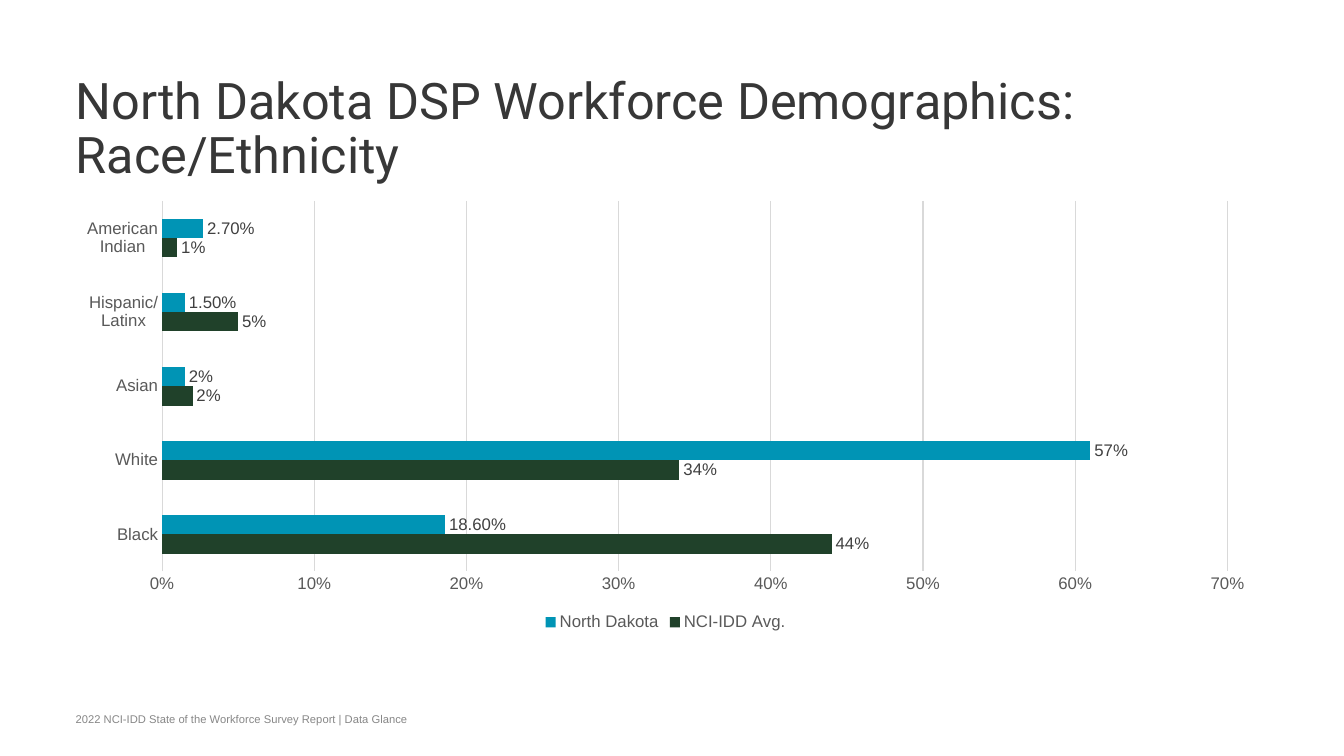
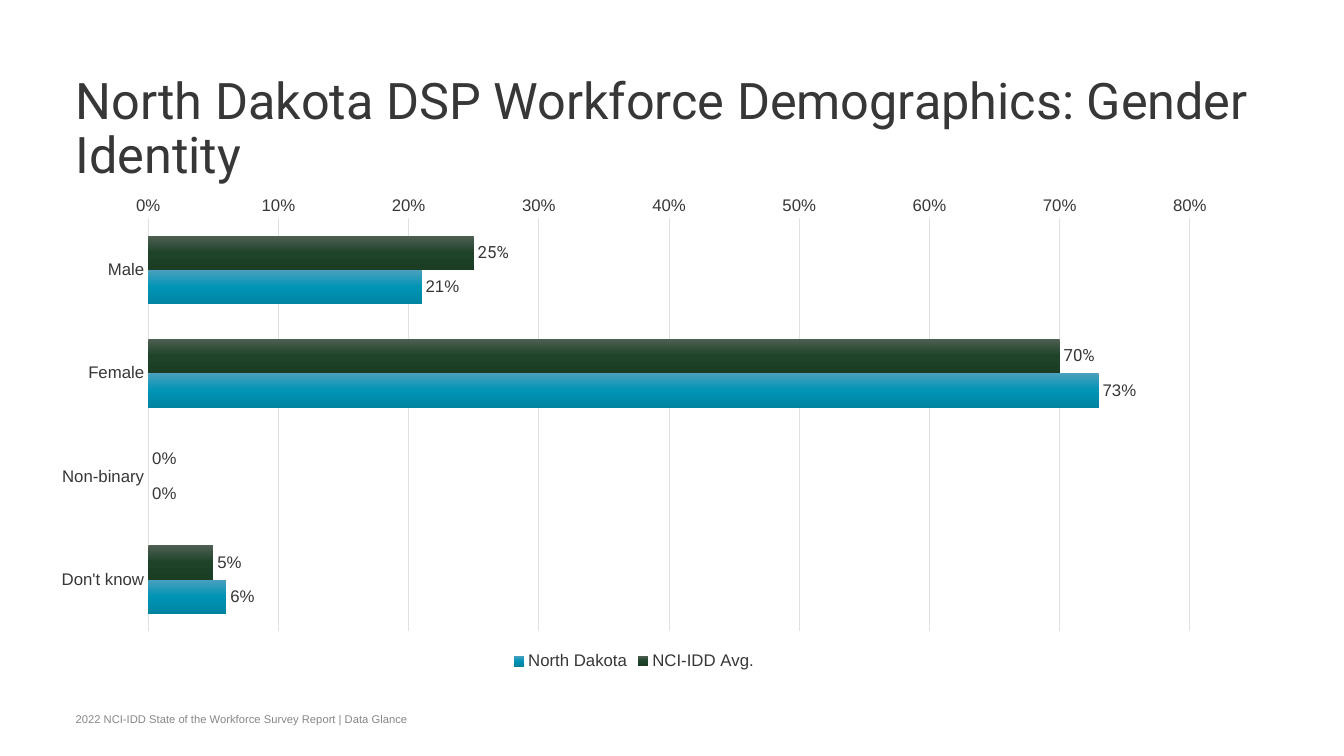
import pptx
import pptx.chart.data
import pptx.dml.color
import pptx.enum.chart
import pptx.enum.text
import pptx.oxml
import pptx.oxml.ns
import pptx.util

PX = 9525  # EMU per px, 96 px to the inch
SLIDE_SIZE = (1280, 720)
TITLE_BOX = (72, 72, 1136, 96)
FOOTER_BOX = (72, 677, 755, 14)
FOOTER = "2022 NCI-IDD State of the Workforce Survey Report | Data Glance"
BODY_FONT, TITLE_FONT = "Arial", "Roboto"
INK, FOOTER_GREY = "373737", "878787"

# A series fill is one colour, or the stops of a top-to-bottom gradient.
# "custom" maps a point to its own label text and font.
SLIDES = [
    {
        "title": "North Dakota DSP Workforce Demographics: Race/Ethnicity",
        "box": (60, 183, 1148, 422),
        "categories": ["Black", "White", "Asian", "Hispanic/Latinx", "American Indian"],
        "reverse": False,
        "maximum": 0.7,
        "gap": 182,
        "text": "595959",
        "label": "404040",
        "line": "D9D9D9",
        "series": [
            {"name": "NCI-IDD Avg.", "values": [0.44, 0.34, 0.02, 0.05, 0.01],
             "fill": ["20412A"], "format": "0%", "custom": {}},
            {"name": "North Dakota", "values": [0.186, 0.61, 0.015, 0.015, 0.027],
             "fill": ["0094B5"], "format": "0.00%",
             "custom": {1: ("57%", BODY_FONT), 2: ("2%", BODY_FONT)}},
        ],
    },
    {
        "title": "North Dakota DSP Workforce Demographics: Gender Identity",
        "box": (36, 178, 1136, 464),
        "categories": ["Male", "Female", "Non-binary", "Don't know"],
        "reverse": True,
        "maximum": 0.8,
        "gap": 100,
        "text": INK,
        "label": INK,
        "line": "E1E1E1",
        "series": [
            {"name": "NCI-IDD Avg.", "values": [0.25, 0.7, 0, 0.05],
             "fill": ["4F5F53", "1E4329", "1A3D24"], "format": "0%",
             "custom": {0: ("25%", TITLE_FONT), 1: ("70%", TITLE_FONT)}},
            {"name": "North Dakota", "values": [0.21, 0.73, 0, 0.06],
             "fill": ["4BA0BE", "0094B5", "0084A1"], "format": "0%", "custom": {}},
        ],
    },
]


def color(value):
    return pptx.dml.color.RGBColor.from_string(value)


def emu(box):
    return [pptx.util.Emu(length * PX) for length in box]


def set_font(font, name, size, ink):
    font.name = name
    font.size = pptx.util.Pt(size)
    font.color.rgb = color(ink)


def set_line(line, ink):
    line.color.rgb = color(ink)
    line.width = pptx.util.Pt(0.75)


def add_text(page, text, box, *, font, size, ink, anchor="TOP", spacing=None):
    frame = page.shapes.add_textbox(*emu(box)).text_frame
    frame.word_wrap = True
    frame.margin_left = frame.margin_top = frame.margin_right = frame.margin_bottom = 0
    frame.vertical_anchor = pptx.enum.text.MSO_ANCHOR[anchor]
    para = frame.paragraphs[0]
    para.line_spacing = spacing
    span = para.add_run()
    span.text = text
    set_font(span.font, font, size, ink)


def fill_series(series, stops):
    """Fill with one colour, or with evenly spaced stops from top to bottom."""
    fill = series.format.fill
    fill.solid()
    fill.fore_color.rgb = color(stops[0])
    if len(stops) == 1:
        return
    step = 100000 // (len(stops) - 1)
    marks = "".join(
        f'<a:gs pos="{index * step}"><a:srgbClr val="{stop}"/></a:gs>'
        for index, stop in enumerate(stops))
    gradient = pptx.oxml.parse_xml(
        f'<a:gradFill {pptx.oxml.ns.nsdecls("a")} rotWithShape="1">'
        f'<a:gsLst>{marks}</a:gsLst><a:lin ang="5400000" scaled="0"/></a:gradFill>')
    properties = series._element.get_or_add_spPr()
    properties.replace(properties.find(pptx.oxml.ns.qn("a:solidFill")), gradient)


def label_series(series, content, ink):
    outside = pptx.enum.chart.XL_LABEL_POSITION.OUTSIDE_END
    labels = series.data_labels
    labels.show_value = True
    labels.position = outside
    labels.number_format = content["format"]
    labels.number_format_is_linked = False
    set_font(labels.font, BODY_FONT, 12, ink)
    for index, (text, font) in content["custom"].items():
        label = series.points[index].data_label
        span = label.text_frame.paragraphs[0].add_run()
        span.text = text
        set_font(span.font, font, 12, ink)
        label.position = outside


def style_axes(chart, content):
    for axis in (chart.category_axis, chart.value_axis):
        axis.major_tick_mark = axis.minor_tick_mark = pptx.enum.chart.XL_TICK_MARK.NONE
        set_font(axis.tick_labels.font, BODY_FONT, 12, content["text"])
    chart.category_axis.reverse_order = content["reverse"]
    set_line(chart.category_axis.format.line, content["line"])
    values = chart.value_axis
    values.minimum_scale, values.maximum_scale = 0, content["maximum"]
    values.major_unit = 0.1
    values.tick_labels.number_format = "0%"
    values.tick_labels.number_format_is_linked = False
    values.format.line.fill.background()
    set_line(values.major_gridlines.format.line, content["line"])


def add_bar_chart(page, content):
    data = pptx.chart.data.CategoryChartData(number_format="0%")
    data.categories = content["categories"]
    for entry in content["series"]:
        data.add_series(entry["name"], entry["values"], entry["format"])
    kind = pptx.enum.chart.XL_CHART_TYPE.BAR_CLUSTERED
    chart = page.shapes.add_chart(kind, *emu(content["box"]), data).chart
    set_font(chart.font, BODY_FONT, 10, "000000")
    chart.has_title = False
    chart.has_legend = True
    chart.legend.position = pptx.enum.chart.XL_LEGEND_POSITION.BOTTOM
    chart.legend.include_in_layout = False
    set_font(chart.legend.font, BODY_FONT, 12, content["text"])
    style_axes(chart, content)
    plot = chart.plots[0]
    plot.vary_by_categories = False
    plot.gap_width = content["gap"]
    plot.overlap = 0
    for series, entry in zip(plot.series, content["series"]):
        series.invert_if_negative = False
        fill_series(series, entry["fill"])
        label_series(series, entry, content["label"])


def main():
    deck = pptx.Presentation()
    deck.slide_width, deck.slide_height = emu(SLIDE_SIZE)
    for content in SLIDES:
        page = deck.slides.add_slide(deck.slide_layouts[6])
        add_bar_chart(page, content)
        add_text(page, content["title"], TITLE_BOX,
                 font=TITLE_FONT, size=36, ink=INK, spacing=0.9)
        add_text(page, FOOTER, FOOTER_BOX,
                 font=BODY_FONT, size=8, ink=FOOTER_GREY, anchor="BOTTOM")
    deck.save("out.pptx")


if __name__ == "__main__":
    main()
